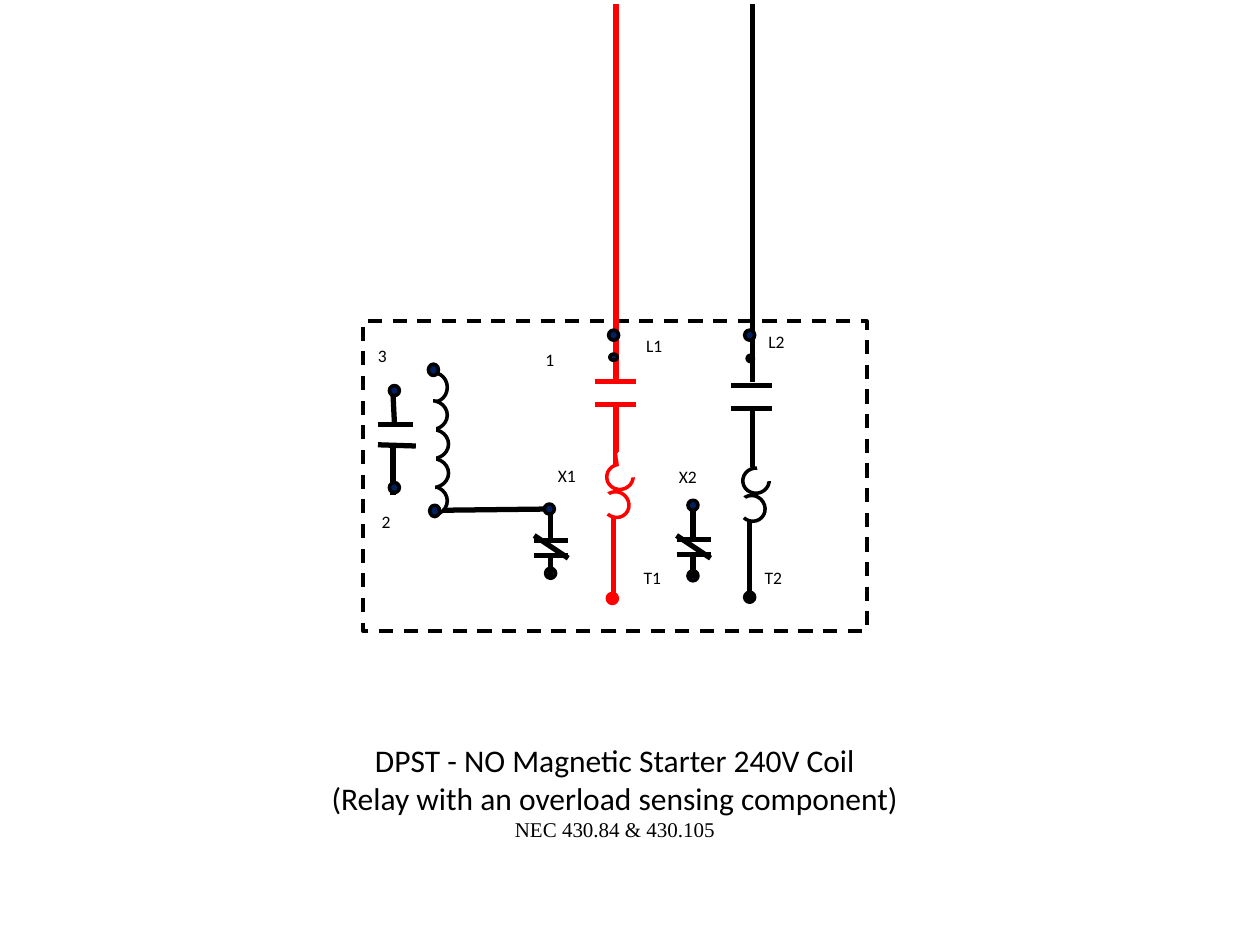
from lxml import etree
from pptx import Presentation
from pptx.dml.color import RGBColor
from pptx.enum.dml import MSO_LINE
from pptx.enum.shapes import MSO_CONNECTOR, MSO_SHAPE
from pptx.enum.text import MSO_ANCHOR, MSO_AUTO_SIZE, PP_ALIGN
from pptx.oxml.ns import qn
from pptx.util import Pt

PX = 9144  # 100 px to the inch
TITLE_ONLY = 5
STRAIGHT = MSO_CONNECTOR.STRAIGHT
OVAL = MSO_SHAPE.OVAL
RECTANGLE = MSO_SHAPE.RECTANGLE
DASH = MSO_LINE.DASH
CENTER = PP_ALIGN.CENTER
TOP = MSO_ANCHOR.TOP
NO_AUTOFIT = MSO_AUTO_SIZE.NONE

BLACK, WHITE, RED, NAVY = "000000", "FFFFFF", "FF0000", "002060"


def px(*lengths):
    return [length * PX for length in lengths]


def color(value):
    return RGBColor.from_string(value)


def set_format(target, values):
    for name, value in values.items():
        setattr(target, name, value)


class Diagram:
    """Holds the drawing style and the current slide."""

    outline_width = Pt(2)
    wire_width = Pt(3)
    label_format = {"size": Pt(10), "name": "Calibri"}
    caption_format = {"size": Pt(18), "name": "Calibri"}
    reference_format = {"size": Pt(12), "name": "Times New Roman"}

    def __init__(self, slide):
        self.slide = slide
        self.shapes = slide.shapes

    # Basic elements
    def shape(self, kind, box, fill, line, rotation=0):
        shape = self.shapes.add_shape(kind, *px(*box))
        shape.shadow.inherit = False
        shape.rotation = rotation
        if fill:
            shape.fill.solid()
            shape.fill.fore_color.rgb = color(fill)
        else:
            shape.fill.background()
        shape.line.color.rgb = color(line)
        shape.line.width = self.outline_width
        return shape

    def dot(self, left, top, fill=NAVY, line=BLACK, width=8, height=8):
        self.shape(OVAL, (left, top, width, height), fill, line)

    def mask(self, box, rotation=0):
        self.shape(RECTANGLE, box, WHITE, WHITE, rotation)

    def wire(self, x1, y1, x2, y2, line=BLACK):
        wire = self.shapes.add_connector(STRAIGHT, *px(x1, y1, x2, y2))
        wire.line.color.rgb = color(line)
        wire.line.width = self.wire_width
        etree.SubElement(wire._element.spPr, qn("a:effectLst"))

    def text(self, paragraph, words, font_format):
        run = paragraph.add_run()
        run.text = words
        set_format(run.font, font_format)
        run.font.color.rgb = color(BLACK)

    def label(self, words, left, top, width=37):
        box = self.shapes.add_textbox(*px(left, top, width, 27))
        box.text_frame.word_wrap = True
        self.text(box.text_frame.paragraphs[0], words, self.label_format)

    def caption(self, box, lines):
        title = self.shapes.title
        set_format(title, dict(zip(("left", "top", "width", "height"), px(*box))))
        frame = title.text_frame
        set_format(frame, {"word_wrap": True, "vertical_anchor": TOP, "auto_size": NO_AUTOFIT})
        for index, (words, font_format) in enumerate(lines):
            paragraph = frame.add_paragraph() if index else frame.paragraphs[0]
            paragraph.alignment = CENTER
            self.text(paragraph, words, font_format)

    # Circuit symbols
    def power_pole(self, x, y, line, hook_mask, hook_angle):
        """Line wire, open contact, overload heater and load wire."""
        self.wire(x, 303, x, 3, line)
        for plate in (y, y + 18):
            self.wire(x - 17, plate, x + 16, plate, line)
        self.wire(x, y + 65, x, y + 19, line)
        self.wire(x - 2, y + 172, x - 2, y + 108, line)
        self.shape(OVAL, (x - 7, y + 65, 20, 21), WHITE, line, 82.7)
        self.mask(hook_mask, hook_angle)
        self.shape(OVAL, (x - 10, y + 87, 20, 21), WHITE, line, 313.7)
        self.mask((x - 23, y + 90, 20, 16), 313.7)
        self.dot(x - 6, 262)

    def overload_contact(self, x, y):
        """Normally closed contact with a slash."""
        self.wire(x, y, x, 405)
        for plate in (y, y + 12):
            self.wire(x - 13, plate, x + 14, plate)
        self.wire(x, 459, x, y + 12)
        self.wire(x - 13, 425, x + 14, 443)

    def coil(self, loops):
        for left, top, width, mask_width in loops:
            self.shape(OVAL, (left, top, width, 23), WHITE, BLACK)
            self.mask((left, top - 6, mask_width, 43))


def main():
    presentation = Presentation()
    presentation.slide_width, presentation.slide_height = px(1000, 750)
    layout = presentation.slide_layouts[TITLE_ONLY]
    diagram = Diagram(presentation.slides.add_slide(layout))

    # Caption
    diagram.caption((227, 583, 522, 91), [
        ("DPST - NO Magnetic Starter 240V Coil", diagram.caption_format),
        ("(Relay with an overload sensing component)", diagram.caption_format),
        ("NEC 430.84 & 430.105", diagram.reference_format),
    ])

    # Starter enclosure
    enclosure = diagram.shape(RECTANGLE, (288, 255, 400, 246), None, BLACK)
    enclosure.line.dash_style = DASH

    # Overload contacts
    for left, top in ((433, 451), (546, 397), (546, 453)):
        diagram.dot(left, top)
    diagram.overload_contact(550, 428)
    diagram.wire(348, 405, 436, 404)
    diagram.overload_contact(437, 429)
    diagram.dot(432, 400)

    # Coil
    diagram.coil([
        (330, 386, 25, 12),
        (334, 296, 21, 10),
        (330, 318, 25, 12),
        (331, 364, 25, 13),
        (331, 341, 25, 14),
    ])
    for left, top in ((340, 289), (341, 401)):
        diagram.dot(left, top, height=9)

    # Holding contact
    diagram.wire(313, 335, 312, 314)
    diagram.wire(300, 337, 328, 337)
    diagram.wire(300, 353, 330, 354)
    diagram.wire(312, 393, 312, 354)
    for top in (383, 306):
        diagram.dot(309, top)

    # Power poles with their terminals
    diagram.power_pole(597, 306, BLACK, (601, 366, 16, 13), 82.7)
    diagram.dot(593, 282, BLACK, width=5, height=5)
    diagram.dot(591, 470, BLACK)
    diagram.power_pole(489, 303, RED, (492, 359, 19, 18), 81.5)
    diagram.dot(484, 281, width=6, height=5)
    diagram.dot(482, 471, RED, RED)

    # Terminal labels
    for words, left, top in (("1", 423, 272), ("2", 293, 401), ("3", 290, 269),
                             ("X1", 433, 364), ("X2", 529, 365)):
        diagram.label(words, left, top)
    for words, left, top in (("L1", 503, 261), ("T1", 501, 445),
                             ("L2", 600, 258), ("T2", 597, 445)):
        diagram.label(words, left, top, 39)

    presentation.save("out.pptx")


if __name__ == "__main__":
    main()
